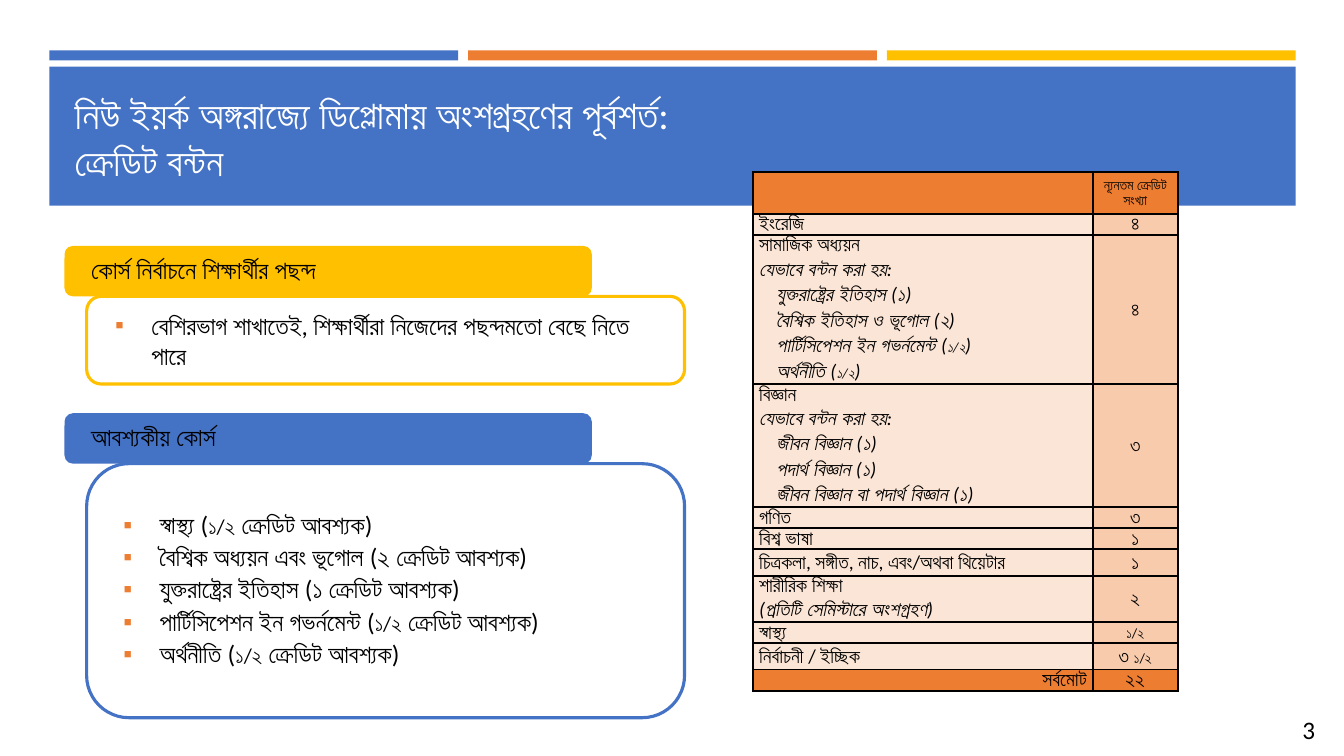
from lxml import etree
from pptx import Presentation
from pptx.dml.color import RGBColor
from pptx.enum.shapes import MSO_SHAPE
from pptx.enum.text import MSO_ANCHOR, MSO_AUTO_SIZE, PP_ALIGN
from pptx.oxml.ns import qn
from pptx.util import Inches, Pt

RECTANGLE = MSO_SHAPE.RECTANGLE
MIDDLE, BOTTOM = MSO_ANCHOR.MIDDLE, MSO_ANCHOR.BOTTOM
NO_AUTOFIT = MSO_AUTO_SIZE.NONE
LEFT, CENTER, RIGHT = PP_ALIGN.LEFT, PP_ALIGN.CENTER, PP_ALIGN.RIGHT

BLUE = RGBColor(0x44, 0x72, 0xC4)
ORANGE = RGBColor(0xED, 0x7D, 0x31)
YELLOW = RGBColor(0xFF, 0xC0, 0x00)
PEACH = RGBColor(0xFB, 0xE5, 0xD6)
DARK_PEACH = RGBColor(0xF8, 0xCB, 0xAD)
BLACK = RGBColor(0, 0, 0)
WHITE = RGBColor(0xFF, 0xFF, 0xFF)
FONT = "Calibri"
HALF = "১/২"

REQUIRED_COURSES = [
    "স্বাস্থ্য (১/২ ক্রেডিট আবশ্যক)",
    "বৈশ্বিক অধ্যয়ন এবং ভূগোল (২ ক্রেডিট আবশ্যক)",
    "যুক্তরাষ্ট্রের ইতিহাস (১ ক্রেডিট আবশ্যক)",
    "পার্টিসিপেশন ইন গভর্নমেন্ট (১/২ ক্রেডিট আবশ্যক)",
    "অর্থনীতি (১/২ ক্রেডিট আবশ্যক)",
]
# Subject lines, credits, row height
CREDIT_ROWS = [
    ([], "ন্যূনতম ক্রেডিট সংখ্যা", 0.41),
    (["ইংরেজি"], "৪", 0.21),
    (["সামাজিক অধ্যয়ন", "যেভাবে বন্টন করা হয়:", "যুক্তরাষ্ট্রের ইতিহাস (১)",
      "বৈশ্বিক ইতিহাস ও ভূগোল (২)", "পার্টিসিপেশন ইন গভর্নমেন্ট (১/২)",
      "অর্থনীতি (১/২)"], "৪", 1.48),
    (["বিজ্ঞান", "যেভাবে বন্টন করা হয়:", "জীবন বিজ্ঞান (১)", "পদার্থ বিজ্ঞান (১)",
      "জীবন বিজ্ঞান বা পদার্থ বিজ্ঞান (১)"], "৩", 1.22),
    (["গণিত"], "৩", 0.21),
    (["বিশ্ব ভাষা"], "১", 0.21),
    (["চিত্রকলা, সঙ্গীত, নাচ, এবং/অথবা থিয়েটার"], "১", 0.26),
    (["শারীরিক শিক্ষা", "(প্রতিটি সেমিস্টারে অংশগ্রহণ)"], "২", 0.46),
    (["স্বাস্থ্য"], "১/২", 0.21),
    (["নির্বাচনী / ইচ্ছিক"], "৩ ১/২", 0.26),
    (["সর্বমোট"], "২২", 0.21),
]


def place(shape, left, top, width, height):
    shape.left, shape.top = Inches(left), Inches(top)
    shape.width, shape.height = Inches(width), Inches(height)


def write(paragraph, text, size, half_size=None, color=BLACK, bold=False, italic=False):
    """Fill a paragraph, setting each half-credit fraction in its own size."""
    before, half, after = text.partition(HALF)
    for part in filter(None, (before, half, after)):
        run = paragraph.add_run()
        run.text = part
        font = run.font
        font.size = Pt(half_size if part == HALF and half_size else size)
        font.name, font.color.rgb = FONT, color
        font.bold, font.italic = bold, italic


def set_indent(paragraph, margin, first_line=0):
    properties = paragraph._p.get_or_add_pPr()
    properties.set("marL", str(Inches(margin)))
    properties.set("indent", str(Inches(first_line)))
    return properties


def add_bullet(paragraph):
    properties = set_indent(paragraph, 0.5, -0.36)
    bullet_color = etree.SubElement(properties, qn("a:buClr"))
    etree.SubElement(bullet_color, qn("a:srgbClr"), val=str(ORANGE))
    etree.SubElement(properties, qn("a:buFont"), typeface="Arial")
    etree.SubElement(properties, qn("a:buChar"), char="▪")


def add_banner(slide, left, top, width):
    """Three colour strips over a blue band, behind the title."""
    gap = 0.1
    strip_width = (width - 2 * gap) / 3
    boxes = [(left + i * (strip_width + gap), top, strip_width, 0.1, color)
             for i, color in enumerate((BLUE, ORANGE, YELLOW))]
    boxes.append((left, top + 0.16, width, 1.38, BLUE))
    for *box, color in boxes:
        shape = slide.shapes.add_shape(RECTANGLE, *map(Inches, box))
        shape.shadow.inherit = False
        shape.fill.solid()
        shape.fill.fore_color.rgb = color
        shape.line.fill.background()
        slide.shapes.element.insert(2, shape.element)

    title = slide.shapes.title
    place(title, left + 0.15, top + 0.3, 12.06, 1.08)
    text_frame = title.text_frame
    text_frame.auto_size, text_frame.vertical_anchor = NO_AUTOFIT, BOTTOM
    text_frame.text = "নিউ ইয়র্ক অঙ্গরাজ্যে ডিপ্লোমায় অংশগ্রহণের পূর্বশর্ত:\vক্রেডিট বন্টন"
    paragraph = text_frame.paragraphs[0]
    paragraph.alignment = LEFT
    for run in paragraph.runs:
        run.font.size, run.font.name = Pt(28), FONT
        run.font.color.rgb = WHITE


def round_placeholder(placeholder, left, top, width, height):
    place(placeholder, left, top, width, height)
    geometry = etree.SubElement(placeholder.element.spPr, qn("a:prstGeom"), prst="roundRect")
    etree.SubElement(geometry, qn("a:avLst"))
    text_frame = placeholder.text_frame
    text_frame.auto_size, text_frame.vertical_anchor = NO_AUTOFIT, MIDDLE
    return text_frame


def add_card(header, body, left, top, body_height, color, heading, items, spacing):
    """A filled heading with an outlined list below it."""
    text_frame = round_placeholder(header, left, top, 5.23, 0.5)
    header.fill.solid()
    header.fill.fore_color.rgb = color
    paragraph = text_frame.paragraphs[0]
    set_indent(paragraph, 0.14)
    paragraph.line_spacing, paragraph.space_before = 0.9, Pt(0)
    write(paragraph, heading, 18)

    text_frame = round_placeholder(body, left + 0.22, top + 0.5, 5.93, body_height)
    body.fill.background()
    body.line.color.rgb, body.line.width = color, Pt(2.25)
    for i, item in enumerate(items):
        paragraph = text_frame.add_paragraph() if i else text_frame.paragraphs[0]
        add_bullet(paragraph)
        paragraph.line_spacing = spacing
        paragraph.space_before = Pt(3.6 if i else 0)
        write(paragraph, item, 18, half_size=15)


def format_cell(cell, color):
    cell.margin_left = cell.margin_right = Inches(0.06)
    cell.margin_top = cell.margin_bottom = 0
    properties = cell._tc.get_or_add_tcPr()
    for side in ("lnL", "lnR", "lnT", "lnB"):
        border = etree.SubElement(properties, qn("a:" + side), w=str(Pt(1.5)))
        fill = etree.SubElement(border, qn("a:solidFill"))
        etree.SubElement(fill, qn("a:srgbClr"), val=str(BLACK))
    cell.fill.solid()
    cell.fill.fore_color.rgb = color


def add_credit_table(slide, left, top):
    height = sum(row[2] for row in CREDIT_ROWS)
    frame = slide.shapes.add_table(len(CREDIT_ROWS), 2, Inches(left), Inches(top),
                                   Inches(4.21), Inches(height))
    table = frame.table
    table.columns[0].width, table.columns[1].width = Inches(3.37), Inches(0.84)
    last = len(CREDIT_ROWS) - 1
    for i, (subjects, credits, row_height) in enumerate(CREDIT_ROWS):
        table.rows[i].height = Inches(row_height)
        subject_cell, credit_cell = table.cell(i, 0), table.cell(i, 1)
        is_edge = i in (0, last)
        format_cell(subject_cell, ORANGE if is_edge else PEACH)
        format_cell(credit_cell, ORANGE if is_edge else DARK_PEACH)

        # Subject, then its italic breakdown, indented from the third line
        text_frame = subject_cell.text_frame
        for j, subject in enumerate(subjects):
            paragraph = text_frame.add_paragraph() if j else text_frame.paragraphs[0]
            paragraph.line_spacing = 1.07
            paragraph.alignment = RIGHT if i == last else LEFT
            if j > 1:
                set_indent(paragraph, 0.17)
            write(paragraph, subject, 14, half_size=10, bold=i == last, italic=j > 0)

        credit_cell.vertical_anchor = MIDDLE
        paragraph = credit_cell.text_frame.paragraphs[0]
        paragraph.alignment, paragraph.line_spacing = CENTER, 1.07
        write(paragraph, credits, 14 if i else 10, half_size=10, bold=i == last)


def add_page_number(slide, left, top):
    text_box = slide.shapes.add_textbox(Inches(left), Inches(top), Inches(0.7), Inches(0.4))
    text_box.text_frame.word_wrap = True
    paragraph = text_box.text_frame.paragraphs[0]
    paragraph.alignment = CENTER
    write(paragraph, "3", 18)


def main():
    presentation = Presentation()
    presentation.slide_width, presentation.slide_height = Inches(13.33), Inches(7.5)
    slide = presentation.slides.add_slide(presentation.slide_layouts[4])
    choice_header, choice_body, required_header, required_body = list(slide.placeholders)[1:]
    add_banner(slide, 0.49, 0.5, 12.36)
    add_card(choice_header, choice_body, 0.64, 2.44, 0.87, YELLOW,
             "কোর্স নির্বাচনে শিক্ষার্থীর পছন্দ",
             ["বেশিরভাগ শাখাতেই, শিক্ষার্থীরা নিজেদের পছন্দমতো বেছে নিতে পারে"], 1.0)
    add_card(required_header, required_body, 0.64, 4.1, 2.52, BLUE,
             "আবশ্যকীয় কোর্স", REQUIRED_COURSES, 0.9)
    add_credit_table(slide, 7.47, 1.71)
    add_page_number(slide, 12.63, 7.04)
    presentation.save("out.pptx")


if __name__ == "__main__":
    main()
